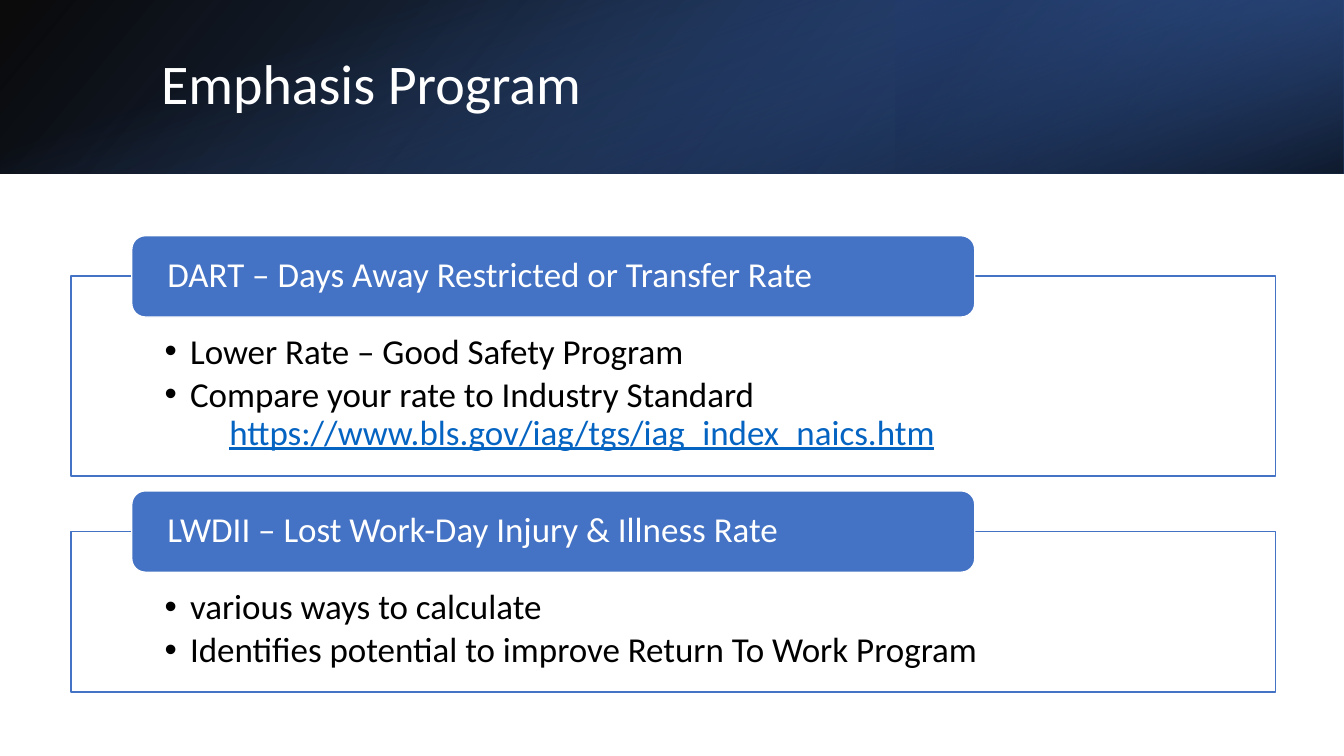
from pptx import Presentation
from pptx import util as u
from pptx.dml import color
from pptx.enum import shapes, text
from pptx.oxml import ns
from lxml import etree

Cm, Pt = u.Cm, u.Pt
WIDE, HIGH, BAND = 33.87, 19.05, 4.37
FONT = "Calibri"
HUES = {
    "white": "FFFFFF", "black": "000000", "blue": "4472C4",
    "deep": "2F5597", "navy": "203864", "link": "0563C1",
}
PANELS = [
    ((1.79, 6.96, 30.35, 5.04), "DART – Days Away Restricted or Transfer Rate",
     ["Lower Rate – Good Safety Program", "Compare your rate to Industry Standard"],
     "https://www.bls.gov/iag/tgs/iag_index_naics.htm"),
    ((1.79, 13.39, 30.35, 4.05), "LWDII – Lost Work-Day Injury & Illness Rate",
     ["various ways to calculate", "Identifies potential to improve Return To Work Program"],
     None),
]


def hue(name):
    """Return the named colour."""
    return color.RGBColor.from_string(HUES[name])


def fade(fill, alphas):
    """Set the opacity, in percent, of each colour in a fill."""
    tags = fill.iter(ns.qn("a:srgbClr"))
    for tag, alpha in zip(tags, alphas):
        etree.SubElement(tag, ns.qn("a:alpha")).set("val", str(alpha * 1000))


def block(slide, kind, box, fill, line):
    """Add a shape with a plain fill and a one-point line."""
    shape = slide.shapes.add_shape(kind, *map(Cm, box))
    shape.shadow.inherit = False
    shape.fill.solid()
    shape.fill.fore_color.rgb = hue(fill)
    shape.line.color.rgb = hue(line)
    shape.line.width = Pt(1)
    return shape


def style(para, size, tint, after=0):
    """Format a whole paragraph."""
    para.font.name = FONT
    para.font.size = Pt(size)
    para.font.color.rgb = hue(tint)
    para.alignment = text.PP_ALIGN.LEFT
    para.line_spacing = 0.9
    para.space_before = Pt(0)
    para.space_after = Pt(after)


def inset(frame, side, edge, anchor):
    """Set the margins and anchor of a text frame that keeps its size."""
    frame.word_wrap = True
    frame.auto_size = text.MSO_AUTO_SIZE.NONE
    frame.margin_left = frame.margin_right = Cm(side)
    frame.margin_top = frame.margin_bottom = Cm(edge)
    frame.vertical_anchor = anchor


def indent(para, left, first):
    """Set the left margin and first-line indent of a paragraph."""
    props = para._p.get_or_add_pPr()
    props.set("marL", str(Cm(left)))
    props.set("indent", str(Cm(first)))
    return props


def layer(slide, box, stops, angle, turn=0, flip=False):
    """Add one gradient layer, its angle measured clockwise."""
    shape = slide.shapes.add_shape(shapes.MSO_SHAPE.RECTANGLE, *map(Cm, box))
    shape.shadow.inherit = False
    shape.line.fill.background()
    shape.rotation = turn
    if flip:
        shape._element.spPr.xfrm.set("flipH", "1")
    shape.fill.gradient()
    shape.fill.gradient_angle = 360 - angle
    for stop, (place, name, alpha) in zip(shape.fill.gradient_stops, stops):
        stop.position = place / 100
        stop.color.rgb = hue(name)
    fade(shape._element.spPr.find(ns.qn("a:gradFill")), [stop[2] for stop in stops])


def header(slide, box, label):
    """Draw the shaded band and set the title on it."""
    left, top, wide, high = box
    layer(slide, box, [(0, "black", 96), (100, "deep", 100)], 140, flip=True)
    layer(slide, (left + wide * 2 / 3, top, wide / 3, high),
          [(19, "navy", 68), (100, "blue", 79)], 320, turn=180, flip=True)
    shift = (wide - high) / 2
    layer(slide, (left + shift, top - shift, high, wide),
          [(23, "blue", 0), (99, "black", 74)], 340, turn=90)
    title = slide.shapes.title
    title.left, title.top = Cm(left + 3.81), Cm(top + 0.95)
    title.width, title.height = Cm(27.89), Cm(2.44)
    frame = title.text_frame
    frame.text = label
    inset(frame, 0.25, 0.13, text.MSO_ANCHOR.MIDDLE)
    style(frame.paragraphs[0], 40, "white")
    slide.shapes._spTree.append(title._element)


def panel(slide, body, box, label, items, link):
    """Draw a framed list with a tab over its top edge."""
    left, top, wide, high = box
    edge = block(slide, shapes.MSO_SHAPE.RECTANGLE, box, "white", "blue")
    fade(edge._element.spPr.find(ns.qn("a:solidFill")), [90])

    tab = block(slide, shapes.MSO_SHAPE.ROUNDED_RECTANGLE,
                (left + 1.53, top - 1.02, wide * 0.7, 2.05), "blue", "white")
    frame = tab.text_frame
    inset(frame, 0.8, 0, text.MSO_ANCHOR.MIDDLE)
    frame.text = label
    style(frame.paragraphs[0], 25, "white")

    body.left, body.top = Cm(left + 2.36), Cm(top + 1.46)
    body.width, body.height = Cm(wide - 4.72), Cm(high - 1.6)
    frame = body.text_frame
    inset(frame, 0, 0, text.MSO_ANCHOR.TOP)
    frame.text = "\n".join(items)
    for para in frame.paragraphs:
        style(para, 25, "black", 3.75)
        indent(para, 0.64, -0.64)
    if link:
        frame.paragraphs[-1].space_after = Pt(0)
        para = frame.add_paragraph()
        para.text = link
        style(para, 25, "link")
        para.font.underline = True
        props = indent(para, 1.63, 0)
        props.insert_element_before(
            etree.Element(ns.qn("a:buNone")), "a:tabLst", "a:defRPr", "a:extLst")
    slide.shapes._spTree.append(body._element)


def main():
    """Build and save the slide."""
    deck = Presentation()
    deck.slide_width, deck.slide_height = Cm(WIDE), Cm(HIGH)
    slide = deck.slides.add_slide(deck.slide_layouts[3])
    header(slide, (0, 0, WIDE, BAND), "Emphasis Program")
    for spot, (box, label, items, link) in enumerate(PANELS, 1):
        panel(slide, slide.placeholders[spot], box, label, items, link)
    deck.save("out.pptx")


if __name__ == "__main__":
    main()
